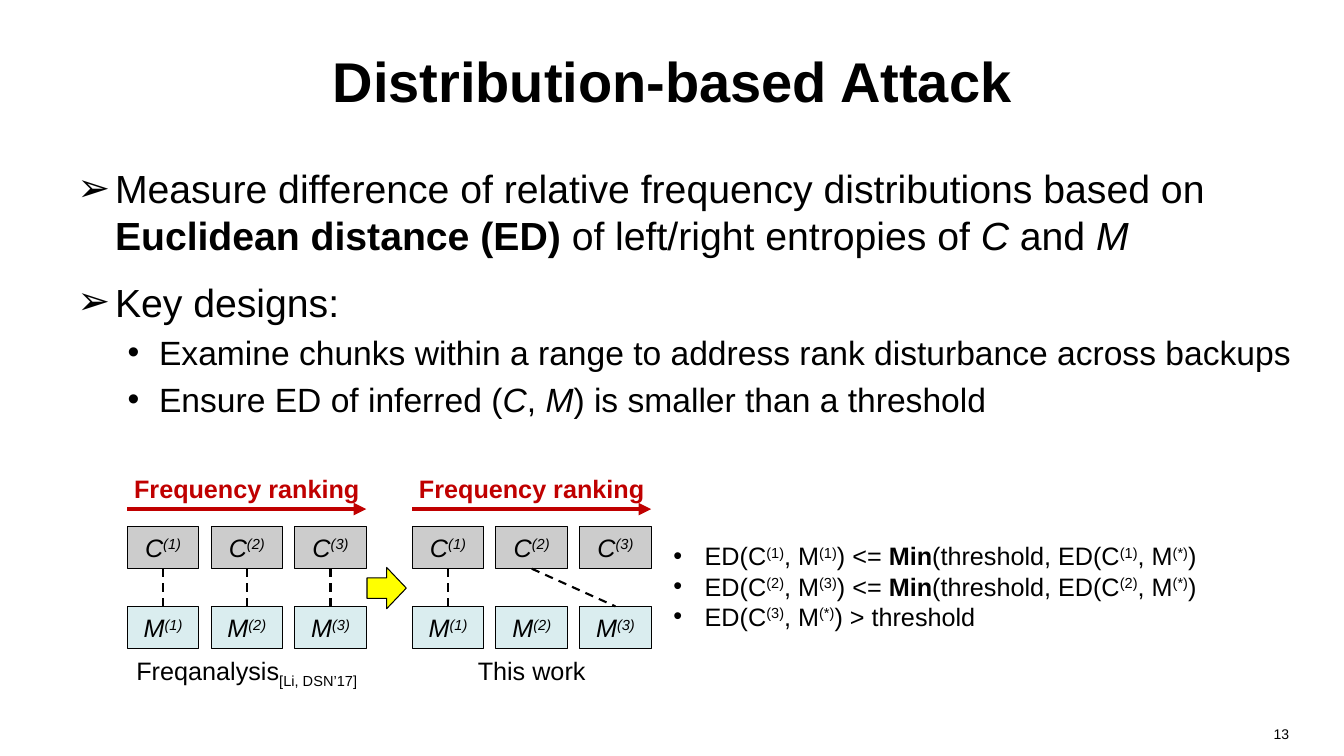
from lxml.etree import SubElement
from pptx import Presentation
from pptx.dml.color import RGBColor
from pptx.enum.dml import MSO_LINE
from pptx.enum.shapes import MSO_CONNECTOR, MSO_SHAPE
from pptx.enum.text import MSO_ANCHOR, PP_ALIGN
from pptx.oxml.ns import qn
from pptx.util import Cm, Pt

BLACK, RED, GREY, TEAL, YELLOW = "000000", "C00000", "CCCCCC", "DAEDEF", "FFFF00"
BASELINES = {"^": "30000", "_": "-25000"}


def color(value):
    return RGBColor.from_string(value)


def write(paragraph, runs, size, font_color=BLACK, align=PP_ALIGN.LEFT):
    """Fill a paragraph from (text, style) pairs; styles: b, i, ^ (super), _ (sub)."""
    paragraph.alignment = align
    paragraph.font.name = "Arial"
    paragraph.font.size = Pt(size)
    paragraph.font.color.rgb = color(font_color)
    for text, style in runs:
        run = paragraph.add_run()
        run.text = text
        if "b" in style:
            run.font.bold = True
        if "i" in style:
            run.font.italic = True
        for mark, baseline in BASELINES.items():
            if mark in style:
                run._r.get_or_add_rPr().set("baseline", baseline)


def add_bullet(paragraph, character, indent, hanging):
    properties = paragraph._p.get_or_add_pPr()
    properties.set("marL", str(Cm(indent)))
    properties.set("indent", str(-Cm(hanging)))
    bullet_font = SubElement(properties, qn("a:buFont"))
    bullet_font.set("typeface", "Arial")
    SubElement(properties, qn("a:buChar")).set("char", character)
    # Default run properties must follow the bullet in the schema order.
    properties.append(properties.find(qn("a:defRPr")))


def add_text(slide, left, top, width, height, runs=(), size=18, font_color=BLACK,
             align=PP_ALIGN.LEFT, anchor=MSO_ANCHOR.TOP):
    frame = slide.shapes.add_textbox(Cm(left), Cm(top), Cm(width), Cm(height)).text_frame
    frame.word_wrap = True
    frame.vertical_anchor = anchor
    write(frame.paragraphs[0], runs, size, font_color, align)
    return frame


def add_bullets(frame, items):
    """Add (runs, size, space before, bullet, indent, hanging) items."""
    for index, (runs, size, space, *bullet) in enumerate(items):
        paragraph = frame.add_paragraph() if index else frame.paragraphs[0]
        write(paragraph, runs, size)
        paragraph.space_before = Pt(space)
        add_bullet(paragraph, *bullet)


def add_shape(slide, kind, left, top, width, height, fill):
    shape = slide.shapes.add_shape(kind, Cm(left), Cm(top), Cm(width), Cm(height))
    shape.shadow.inherit = False
    shape.fill.solid()
    shape.fill.fore_color.rgb = color(fill)
    shape.line.color.rgb = color(BLACK)
    shape.line.width = Pt(0.75)
    return shape


def add_line(slide, start, end, line_color, width):
    line = slide.shapes.add_connector(
        MSO_CONNECTOR.STRAIGHT, *(Cm(value) for value in (*start, *end)))
    line.line.color.rgb = color(line_color)
    line.line.width = Pt(width)
    SubElement(line._element.spPr, qn("a:effectLst"))
    return line


def add_body(slide, left, top, width, height):
    main_bullet, sub_bullet = ("➢", 0.95, 0.95), ("•", 2.06, 0.79)
    add_bullets(add_text(slide, left, top, width, height), [
        ([("Measure difference of relative frequency distributions based on ", ""),
          ("Euclidean distance (ED)", "b"), (" of left/right entropies of ", ""),
          ("C", "i"), (" and ", ""), ("M", "i")], 28, 0, *main_bullet),
        ([("Key designs:", "")], 28, 14, *main_bullet),
        ([("Examine chunks within a range to address rank disturbance across backups", "")],
         24, 4.8, *sub_bullet),
        ([("Ensure ED of inferred (", ""), ("C", "i"), (", ", ""), ("M", "i"),
          (") is smaller than a threshold", "")], 24, 4.8, *sub_bullet),
    ])


def add_ranking_panel(slide, left, top, caption, matches):
    """Rows of C and M chunks, with dashed lines for each matched (C, M) pair of columns."""
    card_width, card_height, step = 1.8, 1.07, 2.11
    width = 2 * step + card_width
    overhang = 0.4  # Lets the labels fit on one line despite the text margins.
    for runs, offset, label_color in ((([("Frequency ranking", "b")]), 0, RED),
                                      (caption, 4.6, BLACK)):
        add_text(slide, left - overhang, top + offset, width + 2 * overhang, 1.02, runs,
                 font_color=label_color, align=PP_ALIGN.CENTER)
    arrow_y = top + 1.04
    arrow = add_line(slide, (left, arrow_y), (left + width, arrow_y), RED, 3)
    SubElement(arrow.line._get_or_add_ln(), qn("a:tailEnd")).set("type", "triangle")

    rows = []
    for letter, fill, offset in (("C", GREY, 1.47), ("M", TEAL, 3.49)):
        cards = []
        for column in range(3):
            card = add_shape(slide, MSO_SHAPE.RECTANGLE, left + column * step, top + offset,
                             card_width, card_height, fill)
            card.text_frame.vertical_anchor = MSO_ANCHOR.MIDDLE
            write(card.text_frame.paragraphs[0], [(letter, "i"), (f"({column + 1})", "i^")],
                  18, align=PP_ALIGN.CENTER)
            cards.append(card)
        rows.append(cards)

    ciphertexts, plaintexts = rows
    for source, target in matches:
        match = add_line(slide, (0, 0), (0, 0), BLACK, 1.5)
        match.line.dash_style = MSO_LINE.DASH
        match.begin_connect(ciphertexts[source], 2)
        match.end_connect(plaintexts[target], 0)


def add_conditions(slide, left, top, width, height):
    def distance(first, second):
        return [("ED(C", ""), (f"({first})", "^"), (", M", ""), (f"({second})", "^")]

    def minimum(first, second):
        threshold = [(") <= ", ""), ("Min", "b"), ("(threshold, ", "")]
        return distance(first, second) + threshold + distance(first, "*") + [(")", "")]

    conditions = [minimum(1, 1), minimum(2, 3), distance(3, "*") + [(") > threshold", "")]]
    add_bullets(add_text(slide, left, top, width, height),
                [(runs, 18, 0, "•", 0.79, 0.79) for runs in conditions])


def main():
    presentation = Presentation()
    presentation.slide_width, presentation.slide_height = Cm(33.87), Cm(19.05)
    slide = presentation.slides.add_slide(presentation.slide_layouts[6])
    add_text(slide, 1.7, 0.43, 30.48, 3.18, [("Distribution-based Attack", "b")], 40,
             align=PP_ALIGN.CENTER, anchor=MSO_ANCHOR.MIDDLE)
    add_body(slide, 1.7, 4.01, 31.75, 13)
    add_ranking_panel(slide, 3.21, 11.79, [("Freqanalysis", ""), ("[Li, DSN’17]", "_")],
                      [(0, 0), (1, 1), (2, 2)])
    add_shape(slide, MSO_SHAPE.RIGHT_ARROW, 9.25, 14.3, 0.99, 1.04, YELLOW)
    add_ranking_panel(slide, 10.39, 11.79, [("This work", "")], [(0, 0), (1, 2)])
    add_conditions(slide, 16.72, 13.5, 14.99, 2.57)
    add_text(slide, 24.84, 18.16, 7.9, 0.89, [("13", "")], 10, align=PP_ALIGN.RIGHT)
    presentation.save("out.pptx")


if __name__ == "__main__":
    main()
